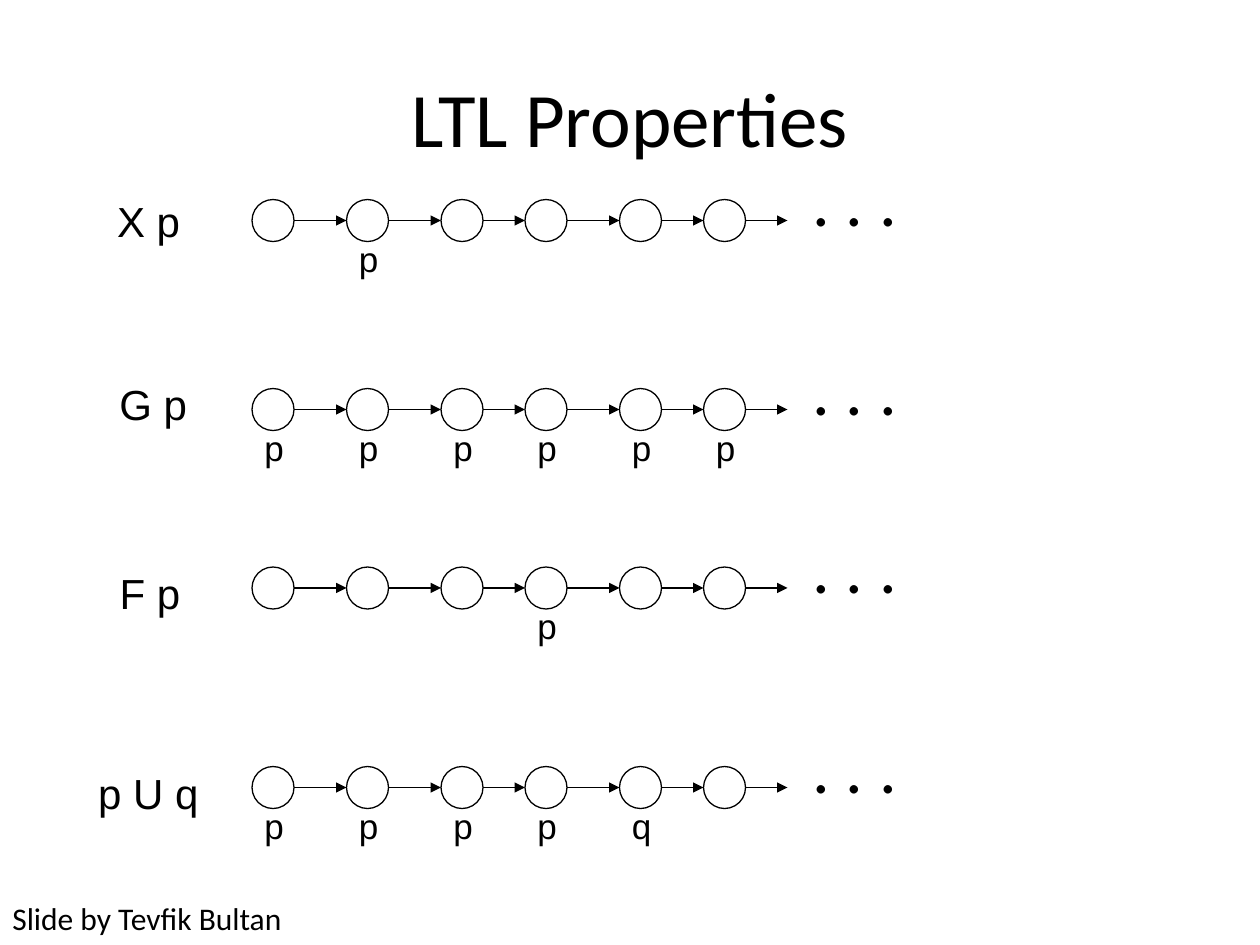
from dataclasses import dataclass

from lxml.etree import SubElement
from pptx import Presentation
from pptx.dml.color import RGBColor
from pptx.enum.shapes import MSO_CONNECTOR, MSO_SHAPE
from pptx.enum.text import MSO_ANCHOR, MSO_AUTO_SIZE, PP_ALIGN
from pptx.oxml.ns import qn
from pptx.util import Pt

INK = "000000"
DIAM = 24
XS = (144, 198, 252, 300, 354, 402)  # left edges of the states
END = 450  # tip of the last arrow

BODY = {"name": "Calibri", "size": Pt(18)}
HEAD = {"name": "Calibri", "size": Pt(44)}
DOTS = {"name": "Calibri", "size": Pt(40)}
RULE = {"name": "Arial", "size": Pt(24)}
MARK = {"name": "Arial", "size": Pt(20)}


@dataclass
class Box:
    x: float
    y: float
    w: float
    h: float


@dataclass
class Trace:
    rule: str
    box: Box
    top: float
    marks: str  # one letter per state, "-" for none


TRACES = (
    Trace("X p", Box(59.8, 108, 50.4, 36), 114, "-p----"),
    Trace("G p", Box(61.2, 213, 53.3, 36), 222, "pppppp"),
    Trace("F p", Box(61.2, 321, 49, 36), 324, "---p--"),
    Trace("p U q", Box(49, 435, 72, 36), 438, "ppppq-"),
)


def paint(target, color: str) -> None:
    target.rgb = RGBColor.from_string(color)


def write(slide, text: str, box: Box, font: dict, title: bool = False) -> None:
    shape = slide.shapes.add_textbox(Pt(box.x), Pt(box.y), Pt(box.w), Pt(box.h))
    frame = shape.text_frame
    layout = {
        "word_wrap": title,
        "auto_size": MSO_AUTO_SIZE.NONE if title else MSO_AUTO_SIZE.SHAPE_TO_FIT_TEXT,
        "vertical_anchor": MSO_ANCHOR.MIDDLE if title else MSO_ANCHOR.TOP,
    }
    for key, value in layout.items():
        setattr(frame, key, value)
    para = frame.paragraphs[0]
    para.alignment = PP_ALIGN.CENTER if title else PP_ALIGN.LEFT
    run = para.add_run()
    run.text = text
    for key, value in font.items():
        setattr(run.font, key, value)
    paint(run.font.color, INK)


def ring(slide, x: float, y: float) -> None:
    shape = slide.shapes.add_shape(MSO_SHAPE.OVAL, Pt(x), Pt(y), Pt(DIAM), Pt(DIAM))
    shape.shadow.inherit = False
    shape.fill.background()
    shape.line.width = Pt(0.75)
    paint(shape.line.color, INK)


def arrow(slide, start: float, stop: float, y: float) -> None:
    link = slide.shapes.add_connector(
        MSO_CONNECTOR.STRAIGHT, Pt(start), Pt(y), Pt(stop), Pt(y))
    link.line.width = Pt(0.75)
    paint(link.line.color, INK)
    SubElement(link.line._get_or_add_ln(), qn("a:tailEnd"), type="triangle")
    SubElement(link._element.spPr, qn("a:effectLst"))


def draw(slide, trace: Trace) -> None:
    top = trace.top
    for x, after, mark in zip(XS, XS[1:] + (END,), trace.marks):
        ring(slide, x, top)
        arrow(slide, x + DIAM, after, top + DIAM / 2)
        if mark != "-":
            write(slide, mark, Box(x, top + 18, 26, 31), MARK)
    write(slide, ". . .", Box(457, top - 28.3, 65, 55.4), DOTS)
    write(slide, trace.rule, trace.box, RULE)


def main() -> None:
    deck = Presentation()
    deck.slide_width, deck.slide_height = Pt(720), Pt(540)
    slide = deck.slides.add_slide(deck.slide_layouts[6])

    # Title
    write(slide, "LTL Properties", Box(36, 21.6, 648, 90), HEAD, title=True)

    # One state sequence per formula
    for trace in TRACES:
        draw(slide, trace)

    # Credit
    write(slide, "Slide by Tevfik Bultan", Box(0, 510, 172, 29), BODY)
    deck.save("out.pptx")


if __name__ == "__main__":
    main()
